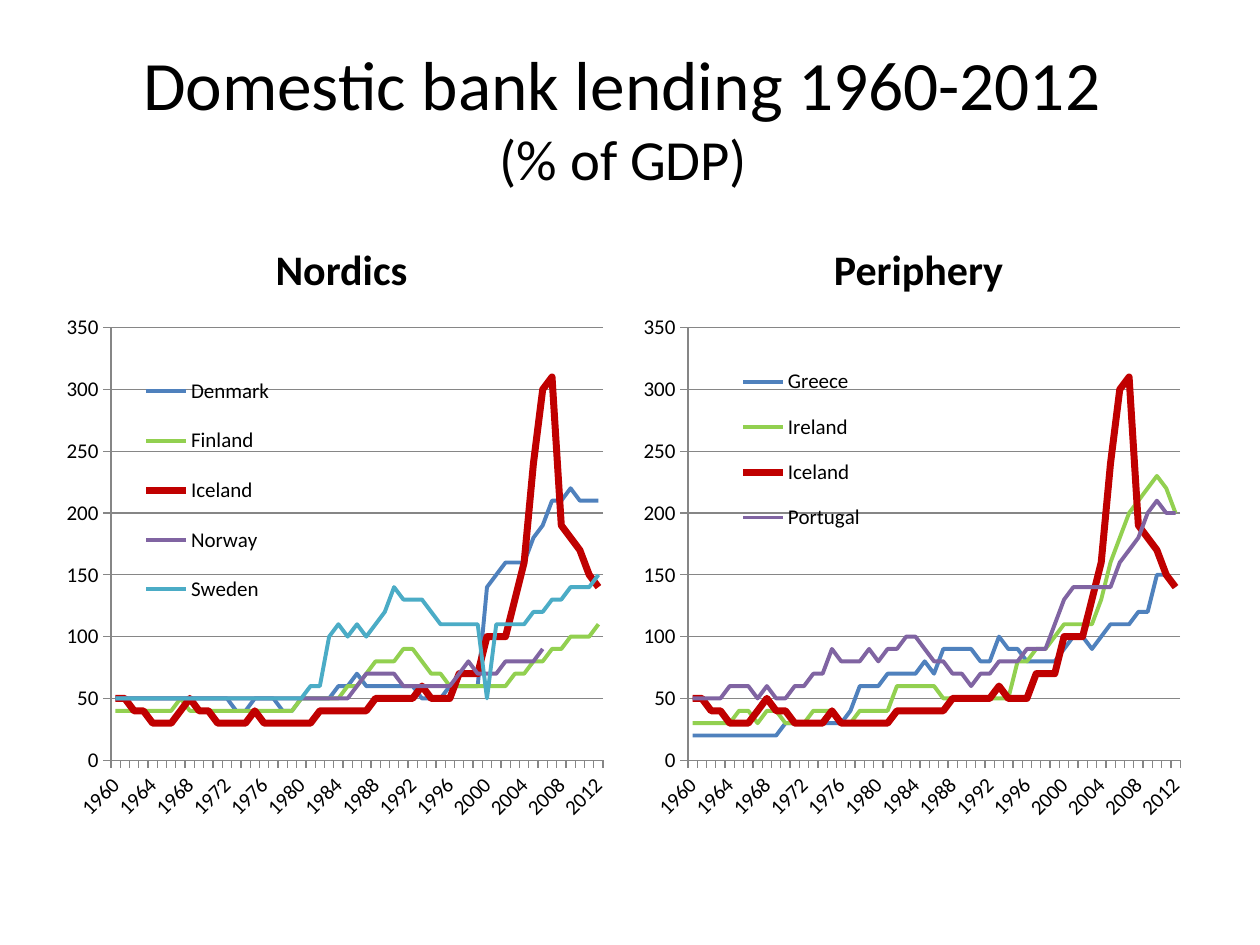
"""Build a slide comparing domestic bank lending in two groups of countries."""
from lxml import etree
from pptx import Presentation
from pptx.chart.data import CategoryChartData
from pptx.dml.color import RGBColor
from pptx.enum.chart import XL_CHART_TYPE as ChartType, XL_LEGEND_POSITION as LegendPosition, XL_TICK_MARK as TickMark
from pptx.enum.text import MSO_ANCHOR as Anchor, PP_ALIGN as Align
from pptx.oxml.ns import qn
from pptx.util import Inches, Pt

FONT = "Calibri"
COLORS = {"text": "000000", "grid": "868686", "blue": "4F81BD", "green": "92D050",
          "red": "C00000", "purple": "8064A2", "teal": "4BACC6"}
YEARS = [str(year) for year in range(1960, 2013)]

DENMARK = [50, 50, 50, 50, 50, 50, 50, 50, 50, 50, 50, 50, 50, 40, 40, 50, 50, 50,
           40, 40, 50, 50, 50, 50, 60, 60, 70, 60, 60, 60, 60, 60, 60, 50, 50, 50,
           60, 60, 60, 60, 140, 150, 160, 160, 160, 180, 190, 210, 210, 220, 210, 210, 210]
FINLAND = [40, 40, 40, 40, 40, 40, 40, 50, 40, 40, 40, 40, 40, 40, 40, 40, 40, 40,
           40, 40, 50, 50, 50, 50, 50, 60, 60, 70, 80, 80, 80, 90, 90, 80, 70, 70,
           60, 60, 60, 60, 60, 60, 60, 70, 70, 80, 80, 90, 90, 100, 100, 100, 110]
ICELAND = [50, 50, 40, 40, 30, 30, 30, 40, 50, 40, 40, 30, 30, 30, 30, 40, 30, 30,
           30, 30, 30, 30, 40, 40, 40, 40, 40, 40, 50, 50, 50, 50, 50, 60, 50, 50,
           50, 70, 70, 70, 100, 100, 100, 130, 160, 240, 300, 310, 190, 180, 170, 150, 140]
NORWAY = [50] * 26 + [60, 70, 70, 70, 70, 60, 60, 60, 60, 60, 60, 70, 80, 70,
                      70, 70, 80, 80, 80, 80, 90] + [None] * 6
SWEDEN = [50] * 21 + [60, 60, 100, 110, 100, 110, 100, 110, 120, 140, 130, 130, 130,
                      120, 110, 110, 110, 110, 110, 50, 110, 110, 110, 110, 120, 120,
                      130, 130, 140, 140, 140, 150]
GREECE = [20, 20, 20, 20, 20, 20, 20, 20, 20, 20, 30, 30, 30, 30, 30, 30, 30, 40,
          60, 60, 60, 70, 70, 70, 70, 80, 70, 90, 90, 90, 90, 80, 80, 100, 90, 90,
          80, 80, 80, 80, 90, 100, 100, 90, 100, 110, 110, 110, 120, 120, 150, 150, 140]
IRELAND = [30, 30, 30, 30, 30, 40, 40, 30, 40, 40, 30, 30, 30, 40, 40, 40, 30, 30,
           40, 40, 40, 40, 60, 60, 60, 60, 60, 50, 50, 50, 50, 50, 50, 50, 50, 80,
           80, 90, 90, 100, 110, 110, 110, 110, 130, 160, 180, 200, 210, 220, 230, 220, 200]
PORTUGAL = [50, 50, 50, 50, 60, 60, 60, 50, 60, 50, 50, 60, 60, 70, 70, 90, 80, 80,
            80, 90, 80, 90, 90, 100, 100, 90, 80, 80, 70, 70, 60, 70, 70, 80, 80, 80,
            90, 90, 90, 110, 130, 140, 140, 140, 140, 140, 160, 170, 180, 200, 210, 200, 200]

PANELS = [
    ("Nordics", 0.5, (0.13, 0.1, 0.26, 0.5),
     [("Denmark", DENMARK, "blue"), ("Finland", FINLAND, "green"),
      ("Iceland", ICELAND, "red"), ("Norway", NORWAY, "purple"), ("Sweden", SWEDEN, "teal")]),
    ("Periphery", 5.08, (0.16, 0.09, 0.26, 0.37),
     [("Greece", GREECE, "blue"), ("Ireland", IRELAND, "green"),
      ("Iceland", ICELAND, "red"), ("Portugal", PORTUGAL, "purple")]),
]


def add_text(page, left, top, width, height, anchor, lines, bold=False):
    box = page.shapes.add_textbox(Inches(left), Inches(top), Inches(width), Inches(height))
    frame = box.text_frame
    frame.word_wrap = True
    frame.vertical_anchor = anchor
    para = frame.paragraphs[0]
    para.alignment = Align.CENTER
    para.font.name = FONT
    para.font.bold = bold
    para.font.color.rgb = RGBColor.from_string(COLORS["text"])
    for index, (text, size) in enumerate(lines):
        if index:
            para.add_line_break()
        span = para.add_run()
        span.text = text
        span.font.size = Pt(size)


def set_layout(parent, index, bounds, inner=False):
    for old in parent.findall(qn("c:layout")):
        parent.remove(old)
    layout = etree.Element(qn("c:layout"))
    manual = etree.SubElement(layout, qn("c:manualLayout"))
    settings = [("layoutTarget", "inner")] if inner else []
    settings += [("xMode", "edge"), ("yMode", "edge"), *zip("xywh", bounds)]
    for name, value in settings:
        etree.SubElement(manual, qn(f"c:{name}")).set("val", str(value))
    parent.insert(index, layout)


deck = Presentation()
deck.slide_width, deck.slide_height = Inches(10), Inches(7.5)
page = deck.slides.add_slide(deck.slide_layouts[6])
add_text(page, 0.5, 0.3, 9, 1.25, Anchor.MIDDLE,
         [("Domestic bank lending 1960-2012 ", 39.6), ("(% of GDP) ", 32.4)])

for heading, left, legend_bounds, countries in PANELS:
    add_text(page, left, 1.68, 4.42, 0.7, Anchor.BOTTOM, [(heading, 24)], bold=True)

    data = CategoryChartData()
    data.categories = YEARS
    for country, values, color in countries:
        data.add_series(country, values)
    chart = page.shapes.add_chart(ChartType.LINE, Inches(left), Inches(2.38),
                                  Inches(4.42), Inches(4.32), data).chart
    chart.has_title = False
    chart.font.name = FONT
    chart.font.size = Pt(12)
    chart.font.color.rgb = RGBColor.from_string(COLORS["text"])
    chart.plots[0].vary_by_categories = False

    for series, (country, values, color) in zip(chart.plots[0].series, countries):
        series.smooth = False
        series.format.line.color.rgb = RGBColor.from_string(COLORS[color])
        series.format.line.width = Pt(4 if country == "Iceland" else 2.25)

    years, percent = chart.category_axis, chart.value_axis
    percent.minimum_scale, percent.maximum_scale, percent.major_unit = 0, 350, 50
    percent.has_major_gridlines = True
    for axis in (years, percent):
        axis.major_tick_mark = TickMark.OUTSIDE
        axis.minor_tick_mark = TickMark.NONE
        axis.tick_labels.font.size = Pt(12)
    for item in (years, percent, percent.major_gridlines):
        item.format.line.color.rgb = RGBColor.from_string(COLORS["grid"])
        item.format.line.width = Pt(0.75)

    axis_xml = years._element
    axis_xml.find(f"{qn('c:txPr')}/{qn('a:bodyPr')}").set("rot", "-2700000")
    skip = etree.Element(qn("c:tickLblSkip"))
    skip.set("val", "4")
    axis_xml.find(qn("c:lblOffset")).addnext(skip)

    chart.has_legend = True
    chart.legend.position = LegendPosition.RIGHT
    chart.legend.include_in_layout = False
    chart.legend.font.size = Pt(12)
    set_layout(chart.legend._element, 1, legend_bounds)
    set_layout(axis_xml.getparent(), 0, (0.086, 0.051, 0.884, 0.795), inner=True)

deck.save("out.pptx")
